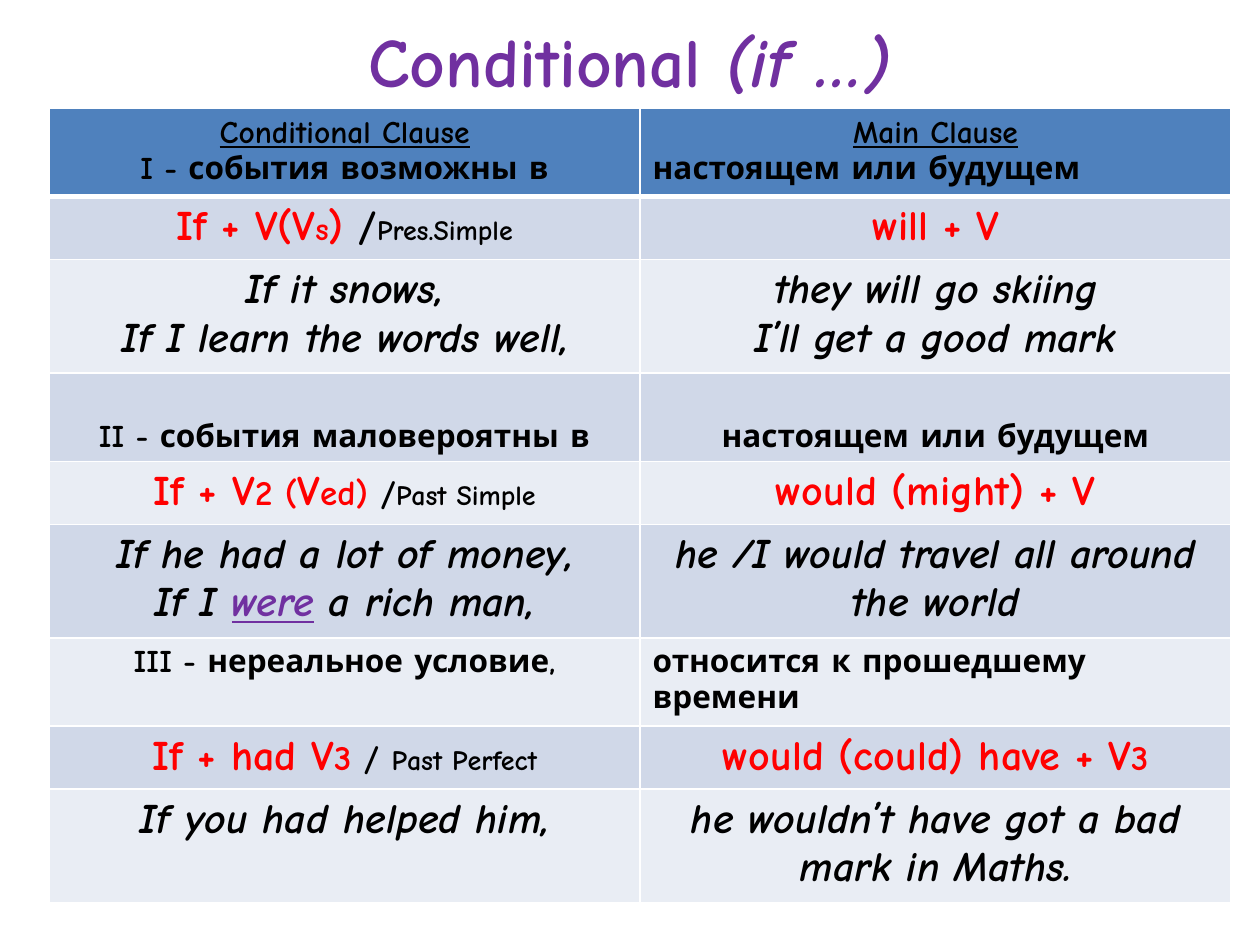
from lxml import etree
from pptx import Presentation
from pptx.dml.color import RGBColor
from pptx.enum.text import MSO_ANCHOR, PP_ALIGN
from pptx.oxml.ns import qn
from pptx.util import Inches, Pt

CENTER, LEFT = PP_ALIGN.CENTER, PP_ALIGN.LEFT
MIDDLE, TOP, BOTTOM = MSO_ANCHOR.MIDDLE, MSO_ANCHOR.TOP, MSO_ANCHOR.BOTTOM
FONT = "Comic Neue"
BLACK, RED, PURPLE, WHITE = "000000", "FF0000", "7030A0", "FFFFFF"
HEADER, DARK, LIGHT = "4F81BD", "D0D8E8", "E9EDF4"

# style: size, colour, italic, underline
STYLES = {
    "title": (39.6, PURPLE, False, False),
    "title italic": (39.6, PURPLE, True, False),
    "heading": (18, BLACK, False, True),
    "label": (18, BLACK, False, False),
    "formula": (24, RED, False, False),
    "formula 20": (20, RED, False, False),
    "formula 18": (18, RED, False, False),
    "slash": (24, BLACK, False, False),
    "slash 20": (20, BLACK, False, False),
    "tense": (16, BLACK, False, False),
    "example": (24, BLACK, True, False),
    "stress": (24, PURPLE, True, True),
}

TITLE = [("Conditional ", "title"), ("(if …)", "title italic")]

# row: height, fill, anchor, alignment of the last right-hand line, left cell, right cell
# cell: paragraphs, each a list of (text, style) runs
ROWS = [
    (0.68, HEADER, TOP, LEFT,
     [[("Conditional Clause", "heading")], [("I - события возможны в", "label")]],
     [[("Main Clause", "heading")], [("настоящем или будущем", "label")]]),
    (0.48, DARK, TOP, CENTER,
     [[("If + V(V", "formula"), ("s", "formula 18"), (") ", "formula"),
       ("/", "slash"), ("Pres.Simple", "tense")]],
     [[("will + V", "formula")]]),
    (0.87, LIGHT, TOP, CENTER,
     [[("If it snows,", "example")], [("If I learn the words well,", "example")]],
     [[("they will go skiing", "example")], [("I’ll get a good mark", "example")]]),
    (0.7, DARK, BOTTOM, CENTER,
     [[("II - события маловероятны в", "label")]],
     [[("настоящем или будущем", "label")]]),
    (0.48, LIGHT, TOP, CENTER,
     [[("If + V", "formula"), ("2 (", "formula 20"), ("V", "formula"),
       ("ed) ", "formula 20"), ("/", "slash 20"), ("Past Simple", "tense")]],
     [[("would (might) + V", "formula")]]),
    (0.87, DARK, TOP, CENTER,
     [[("If he had a lot of money,", "example")],
      [("If I ", "example"), ("were", "stress"), (" a rich man,", "example")]],
     [[("he /I would travel all around the world", "example")]]),
    (0.68, LIGHT, TOP, LEFT,
     [[("III - нереальное условие,", "label")]],
     [[("относится к прошедшему времени", "label")]]),
    (0.48, DARK, TOP, CENTER,
     [[("If + had V", "formula"), ("3 ", "formula 20"), ("/ ", "slash 20"),
       ("Past Perfect", "tense")]],
     [[("would (could) have + V", "formula"), ("3", "formula 20")]]),
    (0.87, LIGHT, TOP, CENTER,
     [[("If you had helped him,", "example")]],
     [[("he wouldn’t have got a bad mark in Maths.", "example")]]),
]


def rgb(color):
    return RGBColor.from_string(color)


def write(tf, paragraphs, last_align=CENTER):
    for i, runs in enumerate(paragraphs):
        p = tf.paragraphs[0] if i == 0 else tf.add_paragraph()
        p.alignment = last_align if i == len(paragraphs) - 1 else CENTER
        for text, style in runs:
            r = p.add_run()
            r.text = text
            size, color, italic, underline = STYLES[style]
            r.font.name, r.font.size, r.font.bold = FONT, Pt(size), True
            r.font.italic, r.font.underline = italic, underline
            r.font.color.rgb = rgb(color)


def set_borders(cell, top, bottom):
    """White cell borders; widths in points, sides are always 1."""
    tc_pr = cell._tc.get_or_add_tcPr()
    for i, (side, width) in enumerate(zip("LRTB", (1, 1, top, bottom))):
        ln = etree.Element(qn(f"a:ln{side}"), w=str(Pt(width)))
        fill = etree.SubElement(ln, qn("a:solidFill"))
        etree.SubElement(fill, qn("a:srgbClr"), val=WHITE)
        tc_pr.insert(i, ln)


prs = Presentation()
prs.slide_width, prs.slide_height = Inches(10), Inches(7.5)
s = prs.slides.add_slide(prs.slide_layouts[6])

title = s.shapes.add_textbox(Inches(0.5), Inches(0.16), Inches(9), Inches(0.63))
tf = title.text_frame
tf.word_wrap = True
tf.vertical_anchor = MIDDLE
write(tf, [TITLE])

table = s.shapes.add_table(len(ROWS), 2, Inches(0.39), Inches(0.86), Inches(9.38),
                           Inches(sum(row[0] for row in ROWS))).table
for column in table.columns:
    column.width = Inches(4.69)
for i, (height, fill, anchor, right_align, left, right) in enumerate(ROWS):
    table.rows[i].height = Inches(height)
    for j, (paragraphs, align) in enumerate([(left, CENTER), (right, right_align)]):
        cell = table.cell(i, j)
        cell.fill.solid()
        cell.fill.fore_color.rgb = rgb(fill)
        cell.vertical_anchor = anchor
        set_borders(cell, top=3 if i == 1 else 1, bottom=3 if i == 0 else 1)
        write(cell.text_frame, paragraphs, align)

prs.save("out.pptx")
